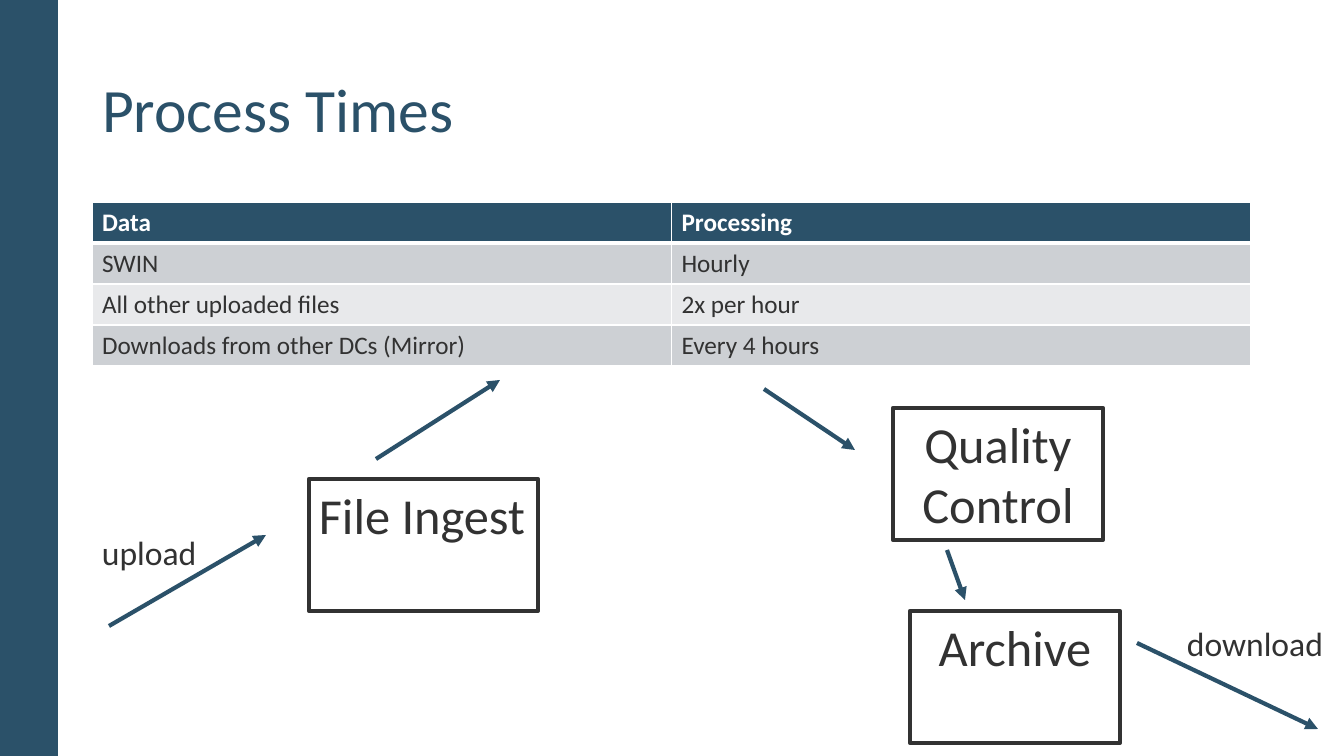
from lxml import etree
from pptx import Presentation
from pptx.dml.color import RGBColor
from pptx.enum.shapes import MSO_CONNECTOR, MSO_SHAPE
from pptx.enum.text import MSO_ANCHOR, PP_ALIGN
from pptx.oxml.ns import qn
from pptx.util import Pt

PX = 914400 / 100.8
NAVY = RGBColor(0x2B, 0x51, 0x69)
INK = RGBColor(0x32, 0x32, 0x32)
WHITE = RGBColor(0xFF, 0xFF, 0xFF)
GREY = RGBColor(0xCD, 0xD0, 0xD4)
PALE = RGBColor(0xE8, 0xE9, 0xEB)
RECT = MSO_SHAPE.RECTANGLE
STRAIGHT = MSO_CONNECTOR.STRAIGHT
LEFT, CENTER = PP_ALIGN.LEFT, PP_ALIGN.CENTER
TOP, MIDDLE = MSO_ANCHOR.TOP, MSO_ANCHOR.MIDDLE


def px(*lengths):
    return [round(n * PX) for n in lengths]


def set_text(tf, text, size, color, align=LEFT, bold=False):
    tf.text = text
    p = tf.paragraphs[0]
    p.alignment = align
    p.font.name = "Calibri"
    p.font.size = Pt(size)
    p.font.bold = bold
    p.font.color.rgb = color


prs = Presentation()
prs.slide_width, prs.slide_height = px(1344, 756)
s = prs.slides.add_slide(prs.slide_layouts[5])

# Side band
band = s.shapes.add_shape(RECT, *px(0, 0, 58, 756))
band.shadow.inherit = False
band.fill.solid()
band.fill.fore_color.rgb = NAVY
band.line.fill.background()

# Title
title = s.shapes.title
title.left, title.top, title.width, title.height = px(92, 40, 1159, 146)
set_text(title.text_frame, "Process Times", 44, NAVY)
title.text_frame.vertical_anchor = MIDDLE
title.text_frame.paragraphs[0].line_spacing = 0.9

# Processing table
ROWS = [
    ("Data", "Processing"),
    ("SWIN", "Hourly"),
    ("All other uploaded files", "2x per hour"),
    ("Downloads from other DCs (Mirror)", "Every 4 hours"),
]
table = s.shapes.add_table(len(ROWS), 2, *px(92, 202, 1159, 164)).table
for i, row in enumerate(ROWS):
    header = i == 0
    for j, text in enumerate(row):
        cell = table.cell(i, j)
        set_text(cell.text_frame, text, 18, WHITE if header else INK, bold=header)
        cell.fill.solid()
        cell.fill.fore_color.rgb = NAVY if header else GREY if i % 2 else PALE
        tc_pr = cell._tc.get_or_add_tcPr()
        widths = {"lnL": 1, "lnR": 1, "lnT": 3 if i == 1 else 1, "lnB": 3 if header else 1}
        for k, (side, width) in enumerate(widths.items()):
            ln = etree.Element(qn(f"a:{side}"), w=str(Pt(width)))
            fill = etree.SubElement(ln, qn("a:solidFill"))
            etree.SubElement(fill, qn("a:srgbClr"), val=str(WHITE))
            tc_pr.insert(k, ln)

# Process steps
for text, box, align, wrap in [
    ("File Ingest", (309, 479, 229, 132), LEFT, False),
    ("Quality Control", (893, 408, 210, 132), CENTER, True),
    ("Archive", (910, 611, 210, 132), CENTER, True),
]:
    sp = s.shapes.add_shape(RECT, *px(*box))
    sp.shadow.inherit = False
    sp.fill.background()
    sp.line.color.rgb = INK
    sp.line.width = Pt(3)
    tf = sp.text_frame
    tf.word_wrap = wrap
    tf.vertical_anchor = TOP
    set_text(tf, text, 36, INK, align)

# Flow arrows
for ends in [
    (109, 626, 266, 535),
    (376, 459, 500, 380),
    (764, 389, 855, 450),
    (947, 550, 965, 600),
    (1137, 643, 1318, 729),
]:
    arrow = s.shapes.add_connector(STRAIGHT, *px(*ends))
    arrow.line.color.rgb = NAVY
    arrow.line.width = Pt(3)
    etree.SubElement(arrow.line._get_or_add_ln(), qn("a:tailEnd"), type="triangle")
    etree.SubElement(arrow._element.spPr, qn("a:effectLst"))

# Arrow labels
for text, box in [("upload", (92, 527, 116, 50)), ("download", (1177, 618, 157, 50))]:
    tf = s.shapes.add_textbox(*px(*box)).text_frame
    tf.word_wrap = False
    set_text(tf, text, 24, INK)

prs.save("out.pptx")
